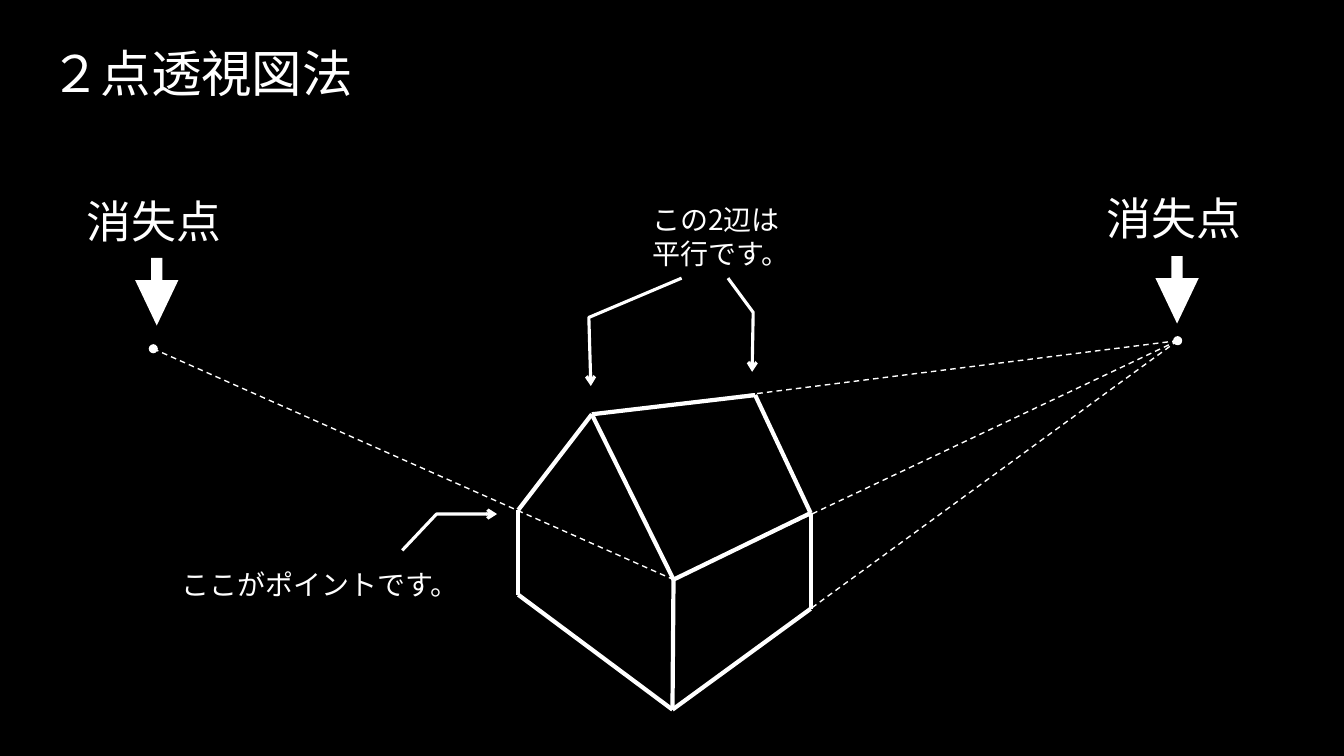
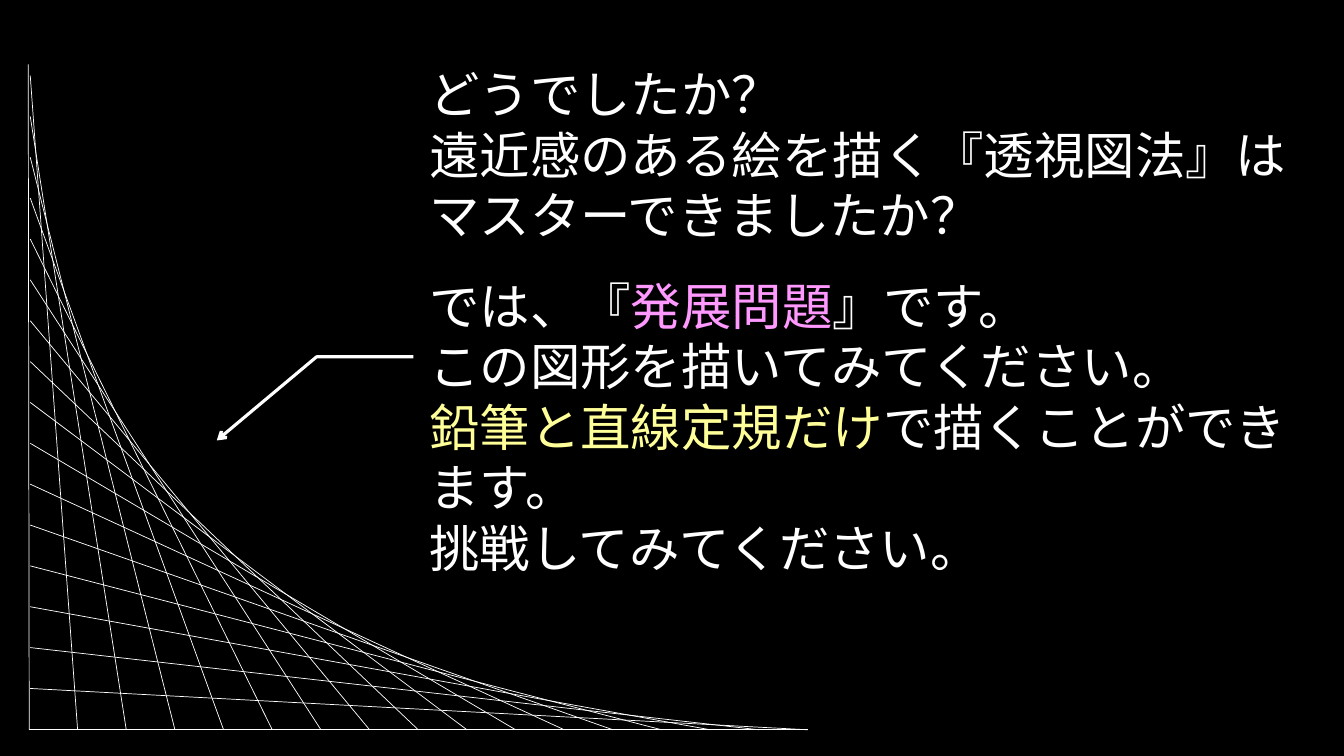
"""Build two slides on two-point perspective and a straight-line curve puzzle."""
from typing import NamedTuple

from lxml import etree
from pptx import Presentation
from pptx.dml.color import RGBColor
from pptx.enum.dml import MSO_LINE
from pptx.enum.shapes import MSO_CONNECTOR, MSO_SHAPE
from pptx.enum.text import PP_ALIGN
from pptx.oxml.ns import qn
from pptx.util import Inches, Pt

STRAIGHT = MSO_CONNECTOR.STRAIGHT
DASH = MSO_LINE.DASH
OVAL = MSO_SHAPE.OVAL
DOWN_ARROW = MSO_SHAPE.DOWN_ARROW
LEFT, JUSTIFY = PP_ALIGN.LEFT, PP_ALIGN.JUSTIFY

BLACK, WHITE, PINK, YELLOW = "000000", "FFFFFF", "FF99FF", "FFFF99"
FONT = "Noto Sans CJK JP"
LINE_HEIGHT = 1.2
BODY_SIZE, LABEL_SIZE, NOTE_SIZE = 36, 32, 20
DOT_SIZE = 0.09


class Point(NamedTuple):
    x: float
    y: float


class Span(NamedTuple):
    text: str
    color: str = WHITE


class Vanishing(NamedTuple):
    point: Point
    label: Point
    arrow: Point


RIDGE_LEFT, RIDGE_RIGHT = Point(5.87, 4.11), Point(7.49, 3.92)
EAVE_LEFT, EAVE_FRONT, EAVE_RIGHT = Point(5.14, 5.06), Point(6.68, 5.75), Point(8.04, 5.09)
GROUND_LEFT, GROUND_FRONT, GROUND_RIGHT = Point(5.14, 5.9), Point(6.67, 7.04), Point(8.04, 6.04)

HOUSE_EDGES = [
    (GROUND_LEFT, GROUND_FRONT), (GROUND_FRONT, GROUND_RIGHT),
    (EAVE_LEFT, GROUND_LEFT), (EAVE_FRONT, GROUND_FRONT), (EAVE_RIGHT, GROUND_RIGHT),
    (EAVE_RIGHT, EAVE_FRONT), (RIDGE_LEFT, RIDGE_RIGHT),
    (RIDGE_LEFT, EAVE_LEFT), (RIDGE_LEFT, EAVE_FRONT), (RIDGE_RIGHT, EAVE_RIGHT),
]

LEFT_VANISHING = Vanishing(Point(1.52, 3.46), Point(0.76, 1.87), Point(1.34, 2.56))
RIGHT_VANISHING = Vanishing(Point(11.68, 3.38), Point(10.88, 1.84), Point(11.46, 2.54))
SIGHT_LINES = [
    (RIGHT_VANISHING.point, RIDGE_LEFT), (RIGHT_VANISHING.point, EAVE_FRONT),
    (RIGHT_VANISHING.point, GROUND_FRONT), (LEFT_VANISHING.point, EAVE_FRONT),
]

HOUSE_POINTERS = [
    [Point(3.99, 5.46), Point(4.33, 5.1), Point(4.93, 5.1)],
    [Point(6.76, 2.76), Point(5.84, 3.15), Point(5.86, 3.83)],
    [Point(7.22, 2.76), Point(7.47, 3.1), Point(7.46, 3.69)],
]
PUZZLE_POINTER = [Point(4.1, 3.54), Point(3.14, 3.54), Point(2.15, 4.37)]

WEB_TOP, WEB_CORNER, WEB_RIGHT = Point(0.28, 0.64), Point(0.29, 7.24), Point(8.01, 7.24)
WEB_FIRST_Y, WEB_LAST_Y, WEB_FIRST_X = 0.75, 6.83, 0.77
WEB_STEPS = 15

QUESTIONS = [
    [Span("どうでしたか？")],
    [Span("遠近感のある絵を描く『透視図法』は")],
    [Span("マスターできましたか？")],
    [Span("では、『"), Span("発展問題", PINK), Span("』です。")],
    [Span("この図形を描いてみてください。")],
    [Span("鉛筆と直線定規だけ", YELLOW), Span("で描くことができます。")],
    [Span("挑戦してみてください。")],
]


def rgb(color: str) -> RGBColor:
    """Turn a hex string into a colour."""
    return RGBColor.from_string(color)


def add_page(deck):
    """Add a blank black page."""
    page = deck.slides.add_slide(deck.slide_layouts[6])
    page.background.fill.solid()
    page.background.fill.fore_color.rgb = rgb(BLACK)
    return page


def add_text(page, paragraphs: list[list[Span]], at: Point, width: float, height: float, *,
             size: int, align=LEFT, gaps: dict[int, float] | None = None) -> None:
    """Write paragraphs of coloured spans, with gaps in points before chosen ones."""
    box = page.shapes.add_textbox(Inches(at.x), Inches(at.y), Inches(width), Inches(height))
    frame = box.text_frame
    frame.word_wrap = True
    for index, spans in enumerate(paragraphs):
        para = frame.paragraphs[0] if index == 0 else frame.add_paragraph()
        para.alignment = align
        para.line_spacing = Pt(size * LINE_HEIGHT)
        if gaps and index in gaps:
            para.space_before = Pt(gaps[index])
        for span in spans:
            run = para.add_run()
            run.text = span.text
            run.font.size = Pt(size)
            run.font.color.rgb = rgb(span.color)
            run.font.name = FONT
            east_asian = etree.SubElement(run.font._element, qn("a:ea"))
            east_asian.set("typeface", FONT)


def add_line(shapes, start: Point, end: Point, width: float, dash=None) -> None:
    """Draw a straight white line without a shadow."""
    line = shapes.add_connector(STRAIGHT, Inches(start.x), Inches(start.y),
                                Inches(end.x), Inches(end.y))
    line.line.color.rgb = rgb(WHITE)
    line.line.width = Pt(width)
    if dash is not None:
        line.line.dash_style = dash
    etree.SubElement(line._element.spPr, qn("a:effectLst"))


def add_pointer(page, points: list[Point]) -> None:
    """Draw a bent line with an open arrowhead at its end."""
    start, *rest = [(Inches(point.x), Inches(point.y)) for point in points]
    builder = page.shapes.build_freeform(*start)
    builder.add_line_segments(rest, close=False)
    pointer = builder.convert_to_shape()
    pointer.shadow.inherit = False
    pointer.fill.background()
    pointer.line.color.rgb = rgb(WHITE)
    pointer.line.width = Pt(2.25)
    outline = pointer.line._get_or_add_ln()
    etree.SubElement(outline, qn("a:tailEnd")).set("type", "arrow")


def add_solid(page, kind, at: Point, width: float, height: float):
    """Add a white shape without an outline."""
    shape = page.shapes.add_shape(kind, Inches(at.x), Inches(at.y), Inches(width), Inches(height))
    shape.shadow.inherit = False
    shape.fill.solid()
    shape.fill.fore_color.rgb = rgb(WHITE)
    shape.line.fill.background()
    return shape


def add_vanishing(page, vanishing: Vanishing) -> None:
    """Mark a vanishing point with a dot, an arrow and a label."""
    corner = Point(vanishing.point.x - DOT_SIZE / 2, vanishing.point.y - DOT_SIZE / 2)
    add_solid(page, OVAL, corner, DOT_SIZE, DOT_SIZE)
    arrow = add_solid(page, DOWN_ARROW, vanishing.arrow, 0.43, 0.67)
    arrow.adjustments[0] = 0.26
    arrow.adjustments[1] = 1.05
    add_text(page, [[Span("消失点")]], vanishing.label, 1.59, 0.64,
             size=LABEL_SIZE, align=JUSTIFY)


def build_perspective(deck) -> None:
    """Draw the house in two-point perspective."""
    page = add_page(deck)
    add_text(page, [[Span("２点透視図法")]], Point(0.4, 0.37), 3.43, 0.71, size=BODY_SIZE)
    for start, end in SIGHT_LINES:
        add_line(page.shapes, start, end, 1, DASH)
    for vanishing in (LEFT_VANISHING, RIGHT_VANISHING):
        add_vanishing(page, vanishing)
    for start, end in HOUSE_EDGES:
        add_line(page.shapes, start, end, 3)
    for points in HOUSE_POINTERS:
        add_pointer(page, points)
    add_text(page, [[Span("ここがポイントです。")]], Point(1.7, 5.58), 3.1, 0.44, size=NOTE_SIZE)
    add_text(page, [[Span("この2辺は")], [Span("平行です。")]], Point(6.37, 1.96), 1.7, 0.77,
             size=NOTE_SIZE)


def build_puzzle(deck) -> None:
    """Draw the curve made of straight lines beside the closing questions."""
    page = add_page(deck)
    web = page.shapes.add_group_shape()
    add_line(web.shapes, WEB_TOP, WEB_CORNER, 0.5)
    add_line(web.shapes, WEB_RIGHT, WEB_CORNER, 0.5)
    for step in range(WEB_STEPS + 1):
        share = step / WEB_STEPS
        start = Point(0.3, WEB_FIRST_Y + share * (WEB_LAST_Y - WEB_FIRST_Y))
        end = Point(WEB_FIRST_X + share * (WEB_RIGHT.x - WEB_FIRST_X), WEB_RIGHT.y)
        add_line(web.shapes, start, end, 0.5)
    add_text(page, QUESTIONS, Point(4.16, 0.58), 8.97, 4.64, size=BODY_SIZE, gaps={3: 21.6})
    add_pointer(page, PUZZLE_POINTER)


def main() -> None:
    """Build and save the deck."""
    deck = Presentation()
    deck.slide_width = Inches(13.33)
    deck.slide_height = Inches(7.5)
    build_perspective(deck)
    build_puzzle(deck)
    deck.save("out.pptx")


if __name__ == "__main__":
    main()
